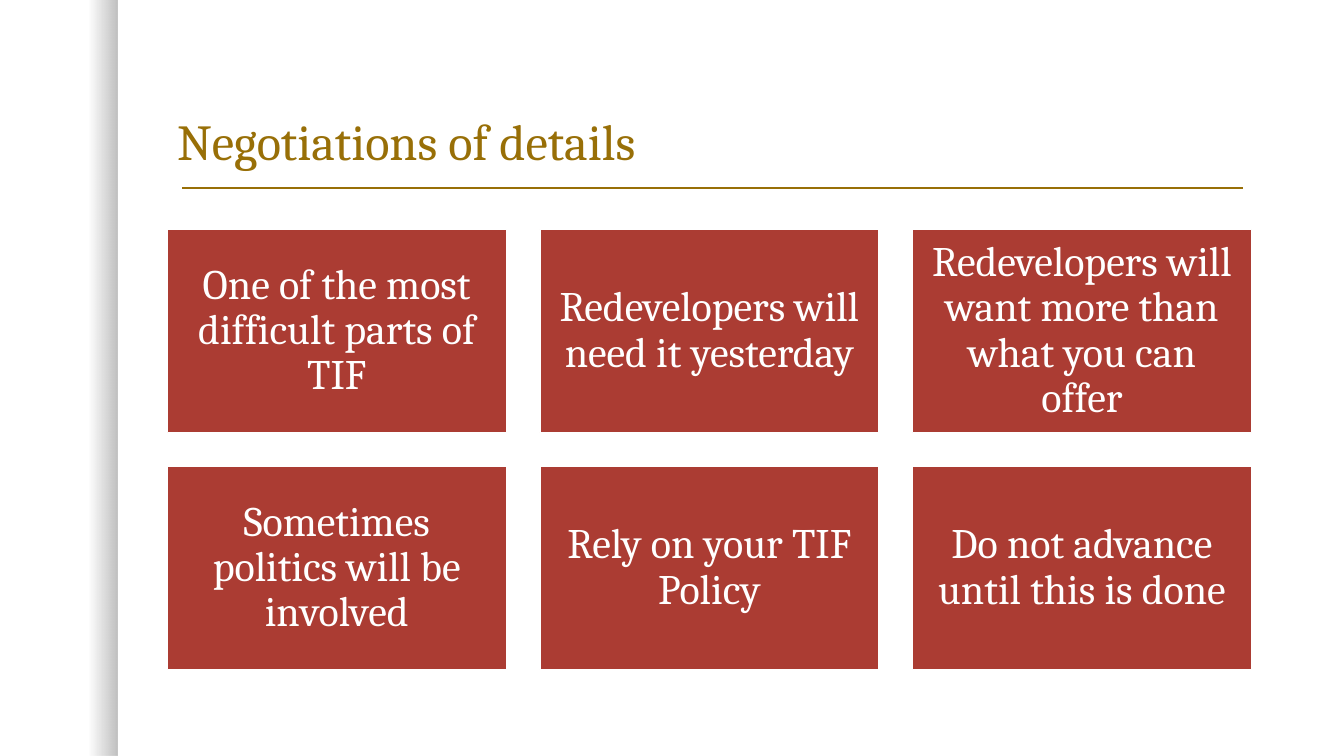
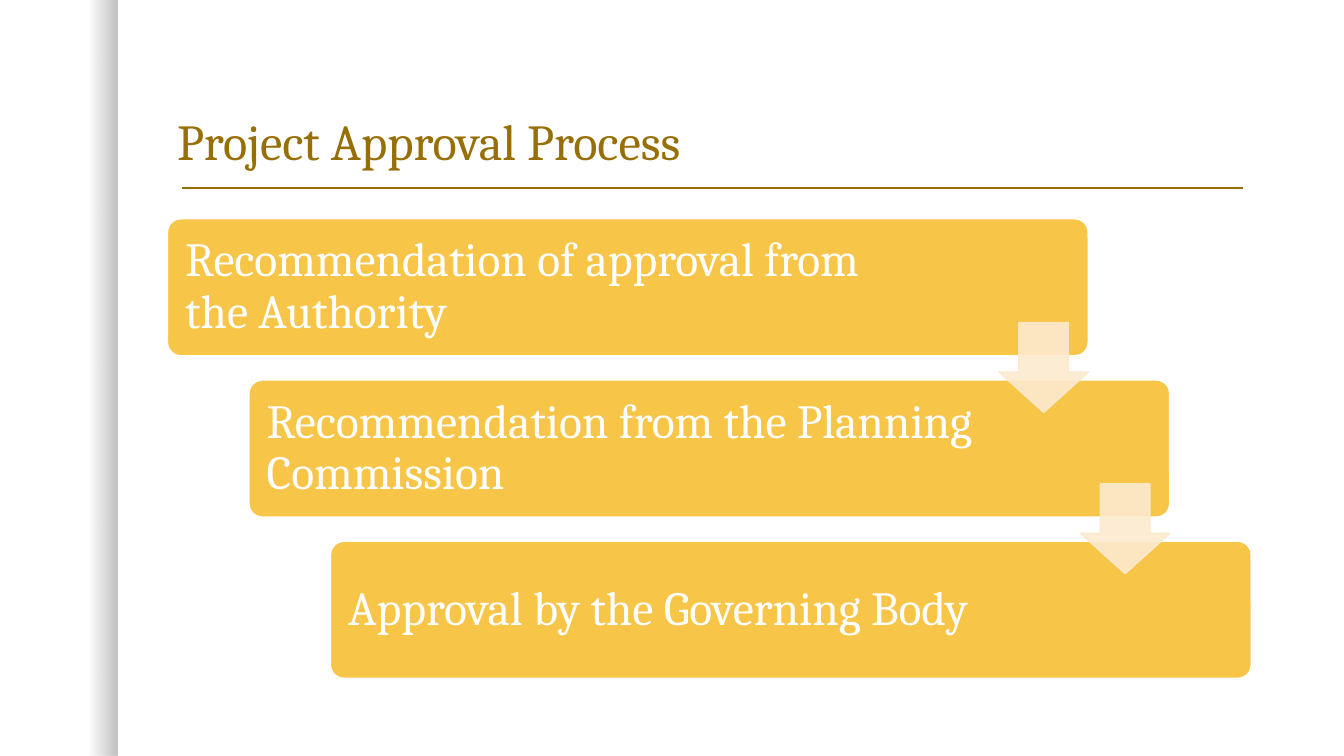
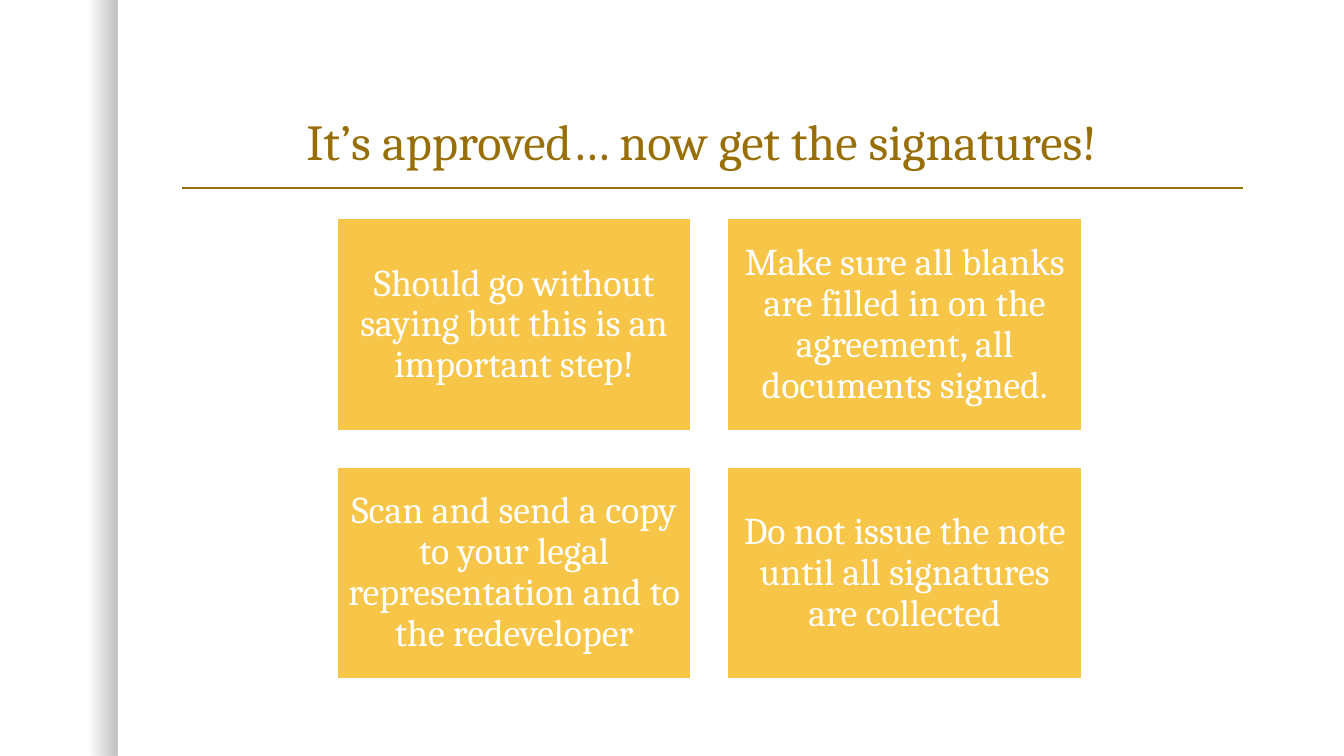
from pptx import Presentation
from pptx.dml.color import RGBColor
from pptx.enum.shapes import MSO_CONNECTOR as Connector, MSO_SHAPE as Preset
from pptx.enum.text import MSO_ANCHOR as Anchor, PP_ALIGN as Align
from pptx.oxml.ns import qn
from pptx.oxml.xmlchemy import OxmlElement
from pptx.util import Inches, Pt


def colour(hex_code):
    return RGBColor.from_string(hex_code)


def set_alpha(element, *percents):
    for tone, percent in zip(element.iter(qn("a:srgbClr")), percents):
        alpha = OxmlElement("a:alpha")
        alpha.set("val", str(percent * 1000))
        tone.append(alpha)


def write(shape, text, size=30, ink="FFFFFF", align=Align.CENTER,
          anchor=Anchor.MIDDLE, insets=(0.1, 0.05, 0.1, 0.05)):
    frame = shape.text_frame
    frame.word_wrap = True
    frame.vertical_anchor = anchor
    (frame.margin_left, frame.margin_top,
     frame.margin_right, frame.margin_bottom) = map(Inches, insets)
    paragraph = frame.paragraphs[0]
    paragraph.alignment = align
    paragraph.line_spacing = 0.9
    run = paragraph.add_run()
    run.text = text
    run.font.name = "Cambria"
    run.font.size = Pt(size)
    run.font.color.rgb = colour(ink)


class Deck:
    COLUMNS, ROWS = 160, 90
    LEFT, WIDTH = 19.9, 129.1
    GOLD, RED, AMBER, CREAM, WHITE = "986F07", "AB3C33", "F7C547", "FCEACF", "FFFFFF"

    def __init__(self):
        self.show = Presentation()
        self.show.slide_width, self.show.slide_height = Inches(40 / 3), Inches(7.5)
        self.unit = self.show.slide_width / self.COLUMNS

    def grid(self, *lengths):
        return [round(length * self.unit) for length in lengths]

    def slide(self, title, align=Align.LEFT, right_inset=0.1):
        self.shapes = self.show.slides.add_slide(self.show.slide_layouts[6]).shapes
        self.edge_shade()
        self.rule(21.7, 148, 22.4)
        heading = self.shapes.add_textbox(*self.grid(self.LEFT, 5, self.WIDTH, 16))
        write(heading, title, size=36, ink=self.GOLD, align=align,
              anchor=Anchor.BOTTOM, insets=(0.1, 0.05, right_inset, 0.05))

    def preset(self, kind, *place):
        shape = self.shapes.add_shape(kind, *self.grid(*place))
        shape.shadow.inherit = False
        return shape

    def edge_shade(self):
        shade = self.preset(Preset.RECTANGLE, 0, 0, 14, self.ROWS)
        shade.line.fill.background()
        shade.fill.gradient()
        shade.fill.gradient_angle = 0
        for stop, position in zip(shade.fill.gradient_stops, (0.75, 1)):
            stop.color.rgb = colour("000000")
            stop.position = position
        set_alpha(shade.fill._xPr, 0, 25)

    def rule(self, start, end, row):
        line = self.shapes.add_connector(
            Connector.STRAIGHT, *self.grid(start, row, end, row))
        line.line.color.rgb = colour(self.GOLD)
        line.line.width = Pt(1)
        line._element.spPr.append(OxmlElement("a:effectLst"))

    def block(self, kind, place, fill, outline=WHITE, weight=1.5):
        block = self.preset(kind, *place)
        block.fill.solid()
        block.fill.fore_color.rgb = colour(fill)
        block.line.color.rgb = colour(outline)
        block.line.width = Pt(weight)
        return block

    def cards(self, texts, per_row, top, width, height, gap, fill, size, inset, weight):
        left = self.LEFT + (self.WIDTH - per_row * width - (per_row - 1) * gap) / 2
        for index, text in enumerate(texts):
            row, column = divmod(index, per_row)
            place = (left + column * (width + gap), top + row * (height + gap),
                     width, height)
            card = self.block(Preset.RECTANGLE, place, fill, weight=weight)
            write(card, text, size=size, insets=[inset] * 4)

    def staircase(self, texts, top=26, width=109.7, height=16.4, rise=19.2, arrow=10.7):
        shift = (self.WIDTH - width) / (len(texts) - 1)
        corners = [(self.LEFT + index * shift, top + index * rise)
                   for index in range(len(texts))]
        for (left, row), text in zip(corners, texts):
            step = self.block(Preset.ROUNDED_RECTANGLE, (left, row, width, height),
                              self.AMBER)
            step.adjustments[0] = 0.1
            write(step, text, size=34, align=Align.LEFT,
                  insets=(0.14, 0.14, 1.84, 0.14))
        for left, row in corners[:-1]:
            place = (left + width - arrow, row + 12.4, arrow, arrow)
            pointer = self.block(Preset.DOWN_ARROW, place, self.CREAM, self.CREAM, 1)
            pointer.adjustments[0], pointer.adjustments[1] = 0.55, 0.45
            set_alpha(pointer._element.spPr, 90, 90)


def main():
    deck = Deck()

    deck.slide("Negotiations of details")
    deck.cards(
        ["One of the most difficult parts of TIF",
         "Redevelopers will need it yesterday",
         "Redevelopers will want more than what you can offer",
         "Sometimes politics will be involved",
         "Rely on your TIF Policy",
         "Do not advance until this is done"],
        per_row=3, top=27.3, width=40.36, height=24.2, gap=4,
        fill=deck.RED, size=30, inset=0.12, weight=1)

    deck.slide("Project Approval Process")
    deck.staircase(
        ["Recommendation of approval from the Authority",
         "Recommendation from the Planning Commission",
         "Approval by the Governing Body"])

    deck.slide("It’s approved… now get the signatures!", Align.CENTER, right_inset=0.25)
    deck.cards(
        ["Should go without saying but this is an important step!",
         "Make sure all blanks are filled in on the agreement, all documents signed.",
         "Scan and send a copy to your legal representation and to the redeveloper",
         "Do not issue the note until all signatures are collected"],
        per_row=2, top=26, width=42.25, height=25.3, gap=4.25,
        fill=deck.AMBER, size=27, inset=0.11, weight=1.5)

    deck.show.save("out.pptx")


if __name__ == "__main__":
    main()
